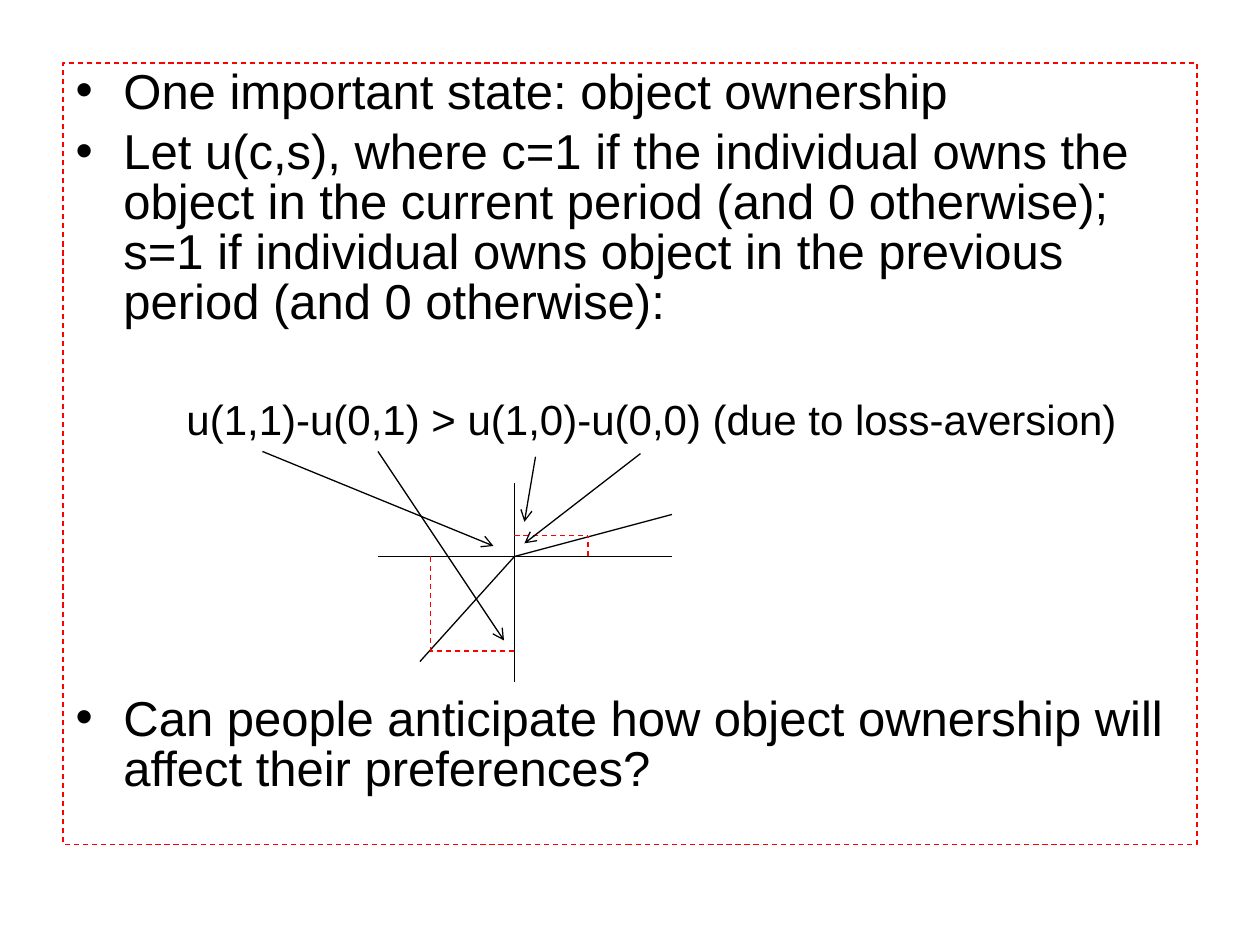
"""Build a slide on object ownership and loss aversion with a kinked value curve."""
import pptx
import pptx.util
import pptx.dml.color
import pptx.enum.dml
import pptx.enum.shapes
import pptx.enum.text
import pptx.oxml.ns
import lxml.etree

COLORS = {"ink": "000000", "guide": "FF0000"}
FONT = "Arial"
WIDTH, HEIGHT = 10, 7.5
INDENT = 0.38
GRID = 1 / 12

PARAGRAPHS = [
    ("One important state: object ownership", {}),
    ("Let u(c,s), where c=1 if the individual owns the object in the current "
     "period (and 0 otherwise); s=1 if individual owns object in the previous "
     "period (and 0 otherwise):", {"before": 6}),
    ("u(1,1)-u(0,1) > u(1,0)-u(0,0) (due to loss-aversion)",
     {"size": 24, "before": 41, "level": 1, "margin": 0.88, "bullet": None}),
    ("Can people anticipate how object ownership will affect their preferences?",
     {"before": 144}),
]

ORIGIN_X, ORIGIN_Y = 49, 53
LEFT, RIGHT, TOP, BOTTOM = 36, 64, 46, 65
GAIN_X, GAIN_Y = 56, 51
LOSS_X, LOSS_Y = 41, 62

AXES = [((LEFT, ORIGIN_Y), (RIGHT, ORIGIN_Y)), ((ORIGIN_X, TOP), (ORIGIN_X, BOTTOM))]
VALUE_CURVE = [((ORIGIN_X, ORIGIN_Y), end) for end in ((RIGHT, 49), (40, 63))]
GUIDES = [
    segment
    for x, y in ((GAIN_X, GAIN_Y), (LOSS_X, LOSS_Y))
    for segment in (((x, ORIGIN_Y), (x, y)), ((ORIGIN_X, y), (x, y)))
]
TERM_ARROWS = [
    ((25, 43), (47, 52)),
    ((61, 43.2), (49.95, 51.75)),
    ((51, 43.5), (49.95, 49.7)),
    ((36, 43), (48, 61)),
]


def add_element(parent, tag, **attributes):
    return lxml.etree.SubElement(parent, pptx.oxml.ns.qn(tag), attributes)


def style_line(line, color, dashed=False):
    line.color.rgb = pptx.dml.color.RGBColor.from_string(COLORS[color])
    line.width = pptx.util.Pt(0.75)
    if dashed:
        line.dash_style = pptx.enum.dml.MSO_LINE.DASH


def write_paragraph(paragraph, text, size=28, before=0, level=0, margin=INDENT, bullet="•"):
    paragraph.level = level
    paragraph.line_spacing = 0.85
    paragraph.space_before = pptx.util.Pt(before)
    paragraph.space_after = pptx.util.Pt(0)
    properties = paragraph._p.get_or_add_pPr()
    properties.set("marL", str(pptx.util.Inches(margin)))
    properties.set("indent", str(-pptx.util.Inches(INDENT) if bullet else 0))
    if bullet:
        add_element(properties, "a:buFont", typeface=FONT)
        add_element(properties, "a:buChar", char=bullet)
    else:
        add_element(properties, "a:buNone")
    run = paragraph.add_run()
    run.text = text
    run.font.name = FONT
    run.font.size = pptx.util.Pt(size)
    run.font.color.rgb = pptx.dml.color.RGBColor.from_string(COLORS["ink"])


def draw_segment(slide, start, end, color="ink", dashed=False, arrow=False):
    segment = slide.shapes.add_connector(
        pptx.enum.shapes.MSO_CONNECTOR.STRAIGHT,
        *(pptx.util.Inches(value * GRID) for value in (*start, *end)))
    style_line(segment.line, color, dashed)
    if arrow:
        add_element(segment.line._get_or_add_ln(), "a:tailEnd", type="arrow")
    add_element(segment._element.spPr, "a:effectLst")


def main():
    deck = pptx.Presentation()
    deck.slide_width = pptx.util.Inches(WIDTH)
    deck.slide_height = pptx.util.Inches(HEIGHT)
    slide = deck.slides.add_slide(deck.slide_layouts[1])
    title = slide.shapes.title._element
    title.getparent().remove(title)

    body = slide.placeholders[1]
    body.left = body.top = pptx.util.Inches(0.5)
    body.width = pptx.util.Inches(WIDTH - 1)
    body.height = pptx.util.Inches(6.2)
    style_line(body.line, "guide", dashed=True)
    frame = body.text_frame
    frame.auto_size = pptx.enum.text.MSO_AUTO_SIZE.NONE
    frame.word_wrap = True
    for index, (text, layout) in enumerate(PARAGRAPHS):
        paragraph = frame.add_paragraph() if index else frame.paragraphs[0]
        write_paragraph(paragraph, text, **layout)

    for segments, look in (
        (AXES + VALUE_CURVE, {}),
        (GUIDES, {"color": "guide", "dashed": True}),
        (TERM_ARROWS, {"arrow": True}),
    ):
        for start, end in segments:
            draw_segment(slide, start, end, **look)
    deck.save("out.pptx")


if __name__ == "__main__":
    main()
